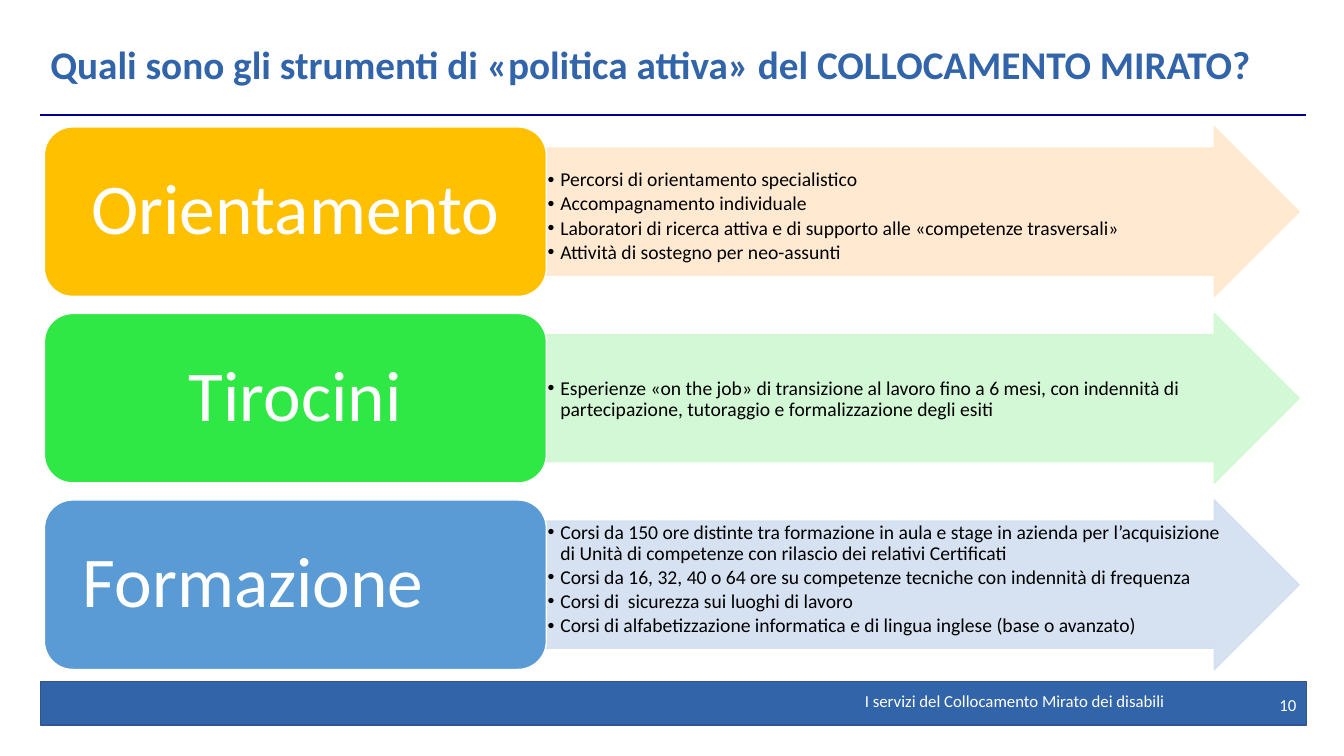
"""Build the slide on the active policy tools of targeted job placement."""
from lxml import etree
from pptx import Presentation
from pptx.dml.color import RGBColor
from pptx.enum.shapes import MSO_CONNECTOR, MSO_SHAPE
from pptx.enum.text import MSO_ANCHOR, MSO_AUTO_SIZE, PP_ALIGN
from pptx.oxml.ns import qn
from pptx.util import Cm, Pt

LEFT, MID, RIGHT = PP_ALIGN.LEFT, PP_ALIGN.CENTER, PP_ALIGN.RIGHT
TOP, CENTER = MSO_ANCHOR.TOP, MSO_ANCHOR.MIDDLE
ARROW, ROUND, RECT = MSO_SHAPE.RIGHT_ARROW, MSO_SHAPE.ROUNDED_RECTANGLE, MSO_SHAPE.RECTANGLE
STRAIGHT, FIXED = MSO_CONNECTOR.STRAIGHT, MSO_AUTO_SIZE.NONE

BLUE = RGBColor(0x32, 0x64, 0xAA)
EDGE = RGBColor(0x32, 0x54, 0x91)
NAVY = RGBColor(0x02, 0x00, 0x8B)
WHITE = RGBColor(0xFF, 0xFF, 0xFF)
BLACK = RGBColor(0x00, 0x00, 0x00)
GOLD = RGBColor(0xFF, 0xC0, 0x00)
CREAM = RGBColor(0xFF, 0xE8, 0xCC)
GREEN = RGBColor(0x30, 0xE8, 0x45)
MINT = RGBColor(0xCF, 0xF8, 0xD1)
SKY = RGBColor(0x5B, 0x9B, 0xD5)
PALE = RGBColor(0xD2, 0xDF, 0xF0)

HEAD = {"name": "Calibri", "size": Pt(28), "bold": True}
LABEL = {"name": "Calibri", "size": Pt(51), "bold": False}
ITEM = {"name": "Calibri", "size": Pt(14), "bold": False}
NOTE = {"name": "Calibri", "size": Pt(12), "bold": False}

ROWS = [
    ("Orientamento", MID, GOLD, CREAM, 0.55, [
        "Percorsi di orientamento specialistico",
        "Accompagnamento individuale",
        "Laboratori di ricerca attiva e di supporto alle «competenze trasversali»",
        "Attività di sostegno per neo-assunti"]),
    ("Tirocini", MID, GREEN, MINT, 1.1, [
        "Esperienze «on the job» di transizione al lavoro fino a 6 mesi, con indennità di "
        "partecipazione, tutoraggio e formalizzazione degli esiti"]),
    ("Formazione", LEFT, SKY, PALE, 0.03, [
        "Corsi da 150 ore distinte tra formazione in aula e stage in azienda per "
        "l’acquisizione di Unità di competenze con rilascio dei relativi Certificati",
        "Corsi da 16, 32, 40 o 64 ore su competenze tecniche con indennità di frequenza",
        "Corsi di  sicurezza sui luoghi di lavoro",
        "Corsi di alfabetizzazione informatica e di lingua inglese (base o avanzato)"]),
]


def write(shape, lines, fonts, color, align, anchor=CENTER, pads=(0.25, 0.13, 0.25, 0.13),
          gap=0, bullet=False):
    frame = shape.text_frame
    look = {"word_wrap": True, "auto_size": FIXED, "vertical_anchor": anchor}
    sides = ("margin_left", "margin_top", "margin_right", "margin_bottom")
    look.update(zip(sides, map(Cm, pads)))
    for key, value in look.items():
        setattr(frame, key, value)
    frame.text = "\n".join(lines)
    shape_of = {"alignment": align, "line_spacing": 0.9, "space_before": Pt(0),
                "space_after": Pt(gap)}
    for para in frame.paragraphs:
        if bullet:
            props = para._p.get_or_add_pPr()
            props.set("marL", str(Cm(0.32)))
            props.set("indent", str(-Cm(0.32)))
            etree.SubElement(props, qn("a:buChar")).set("char", "•")
        for key, value in shape_of.items():
            setattr(para, key, value)
        for run in para.runs:
            for key, value in fonts.items():
                setattr(run.font, key, value)
            run.font.color.rgb = color


def draw(kind, place, fill, line):
    shape = shapes.add_shape(kind, *map(Cm, place))
    shape.shadow.inherit = False
    shape.fill.solid()
    shape.fill.fore_color.rgb = fill
    shape.line.color.rgb = line
    shape.line.width = Pt(1)
    return shape


deck = Presentation()
deck.slide_width, deck.slide_height = Cm(33.87), Cm(19.05)
slide = deck.slides.add_slide(deck.slide_layouts[4])
shapes = slide.shapes
title, *lists, spare = slide.placeholders
shapes.element.remove(spare.element)

draw(RECT, (1.02, 17.17, 31.9, 1.1), BLUE, EDGE)
rule = shapes.add_connector(STRAIGHT, Cm(1.02), Cm(2.9), Cm(32.92), Cm(2.9))
rule.line.color.rgb = NAVY
rule.line.width = Pt(1)
etree.SubElement(rule.element.spPr, qn("a:effectLst"))

title.left, title.top, title.width, title.height = map(Cm, (1.02, 0.86, 31.9, 1.65))
write(title, ["Quali sono gli strumenti di «politica attiva» del COLLOCAMENTO MIRATO?"],
      HEAD, BLUE, LEFT)

for step, (row, holder) in enumerate(zip(ROWS, lists)):
    name, align, fill, tint, drop, items = row
    top = 3.2 + 4.7 * step
    arrow = draw(ARROW, (13.77, top, 18.97, 4.27), tint, tint)
    arrow.adjustments[0], arrow.adjustments[1] = 0.75, 0.5
    for color in arrow.element.spPr.iter(qn("a:srgbClr")):
        etree.SubElement(color, qn("a:alpha")).set("val", "90000")

    place = (13.77, top + 0.53, 17.37, 3.2)
    holder.left, holder.top, holder.width, holder.height = map(Cm, place)
    shapes.element.append(holder.element)
    write(holder, items, ITEM, BLACK, LEFT, TOP, (0.03, drop, 0.03, 0.03), 2.1, True)

    box = draw(ROUND, (1.12, top, 12.65, 4.27), fill, WHITE)
    write(box, [name], LABEL, WHITE, align, pads=(0.76, 0.28, 0.76, 0.28))

for text, place in (
        ("10", (29.87, 17.27, 3.05, 1.02)),
        ("I servizi del Collocamento Mirato dei disabili", (11.46, 17.27, 18.14, 0.84))):
    note = shapes.add_textbox(*map(Cm, place))
    write(note, [text], NOTE, WHITE, RIGHT)

deck.save("out.pptx")
